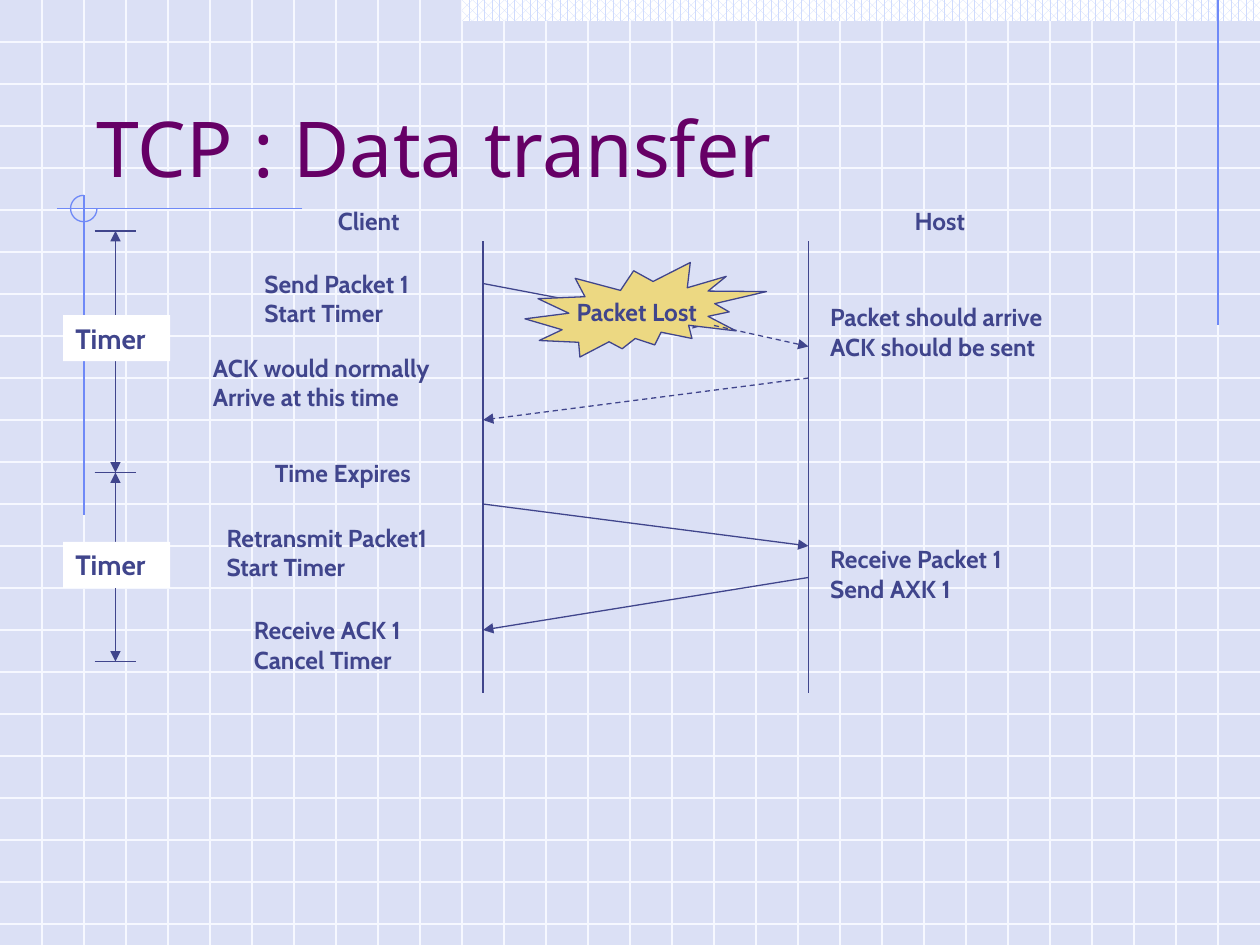
from dataclasses import dataclass

from lxml.etree import SubElement
from pptx import Presentation
from pptx.dml.color import RGBColor
from pptx.enum.dml import MSO_LINE, MSO_PATTERN
from pptx.enum.shapes import MSO_CONNECTOR, MSO_SHAPE
from pptx.enum.text import MSO_ANCHOR, MSO_AUTO_SIZE, PP_ALIGN
from pptx.oxml.ns import qn
from pptx.util import Inches, Pt

BACKGROUND = RGBColor(0xDB, 0xE0, 0xF5)
GRID = RGBColor(0xF6, 0xF8, 0xFF)
PATTERN = RGBColor(0xCF, 0xDB, 0xFD)
WHITE = RGBColor(0xFF, 0xFF, 0xFF)
ACCENT = RGBColor(0x6F, 0x89, 0xF7)
INK = RGBColor(0x40, 0x45, 0x8C)
PURPLE = RGBColor(0x66, 0x00, 0x66)
GOLD = RGBColor(0xEC, 0xD8, 0x82)

# All places and sizes are counted in cells of the background grid.
COLUMNS, ROWS = 30, 22.5
CELL = Inches(10) / COLUMNS
CLIENT, HOST = 11.5, 19.25
TIMER_AXIS = 2.75


@dataclass
class Label:
    text: str
    left: float
    top: float
    width: float
    wrap: bool = False


@dataclass
class Message:
    start: tuple[float, float]
    end: tuple[float, float]
    dashed: bool = False


@dataclass
class Timer:
    start: float
    end: float
    label_top: float


LABELS = [
    Label("Host", 21.48, 4.75, 1.95),
    Label("Client", 7.75, 4.75, 2.31, wrap=True),
    Label("Send Packet 1\nStart Timer", 6, 6.25, 4.77),
    Label("Retransmit Packet1\nStart Timer", 5.1, 12.3, 6.42),
    Label("Packet should arrive\nACK should be sent", 19.47, 7.05, 6.78),
    Label("ACK would normally\nArrive at this time", 4.77, 8.25, 6.54),
    Label("Receive Packet 1\nSend AXK 1", 19.47, 12.81, 5.58),
    Label("Time Expires", 6.25, 10.75, 4.38, wrap=True),
    Label("Receive ACK 1\nCancel Timer", 5.75, 14.5, 4.8, wrap=True),
]
LOST_PACKET = Message((CLIENT, 6.75), (16.75, 7.75))
EXPECTED_ARRIVAL = Message((17, 7.75), (HOST, 8.25), dashed=True)
MESSAGES = [
    LOST_PACKET,
    Message((HOST, 9), (CLIENT, 10), dashed=True),
    Message((CLIENT, 12), (HOST, 13)),
    Message((HOST, 13.75), (CLIENT, 15)),
]
TIMERS = [Timer(5.5, 11.25, 7.5), Timer(11.25, 15.75, 12.9)]


def cells(*counts: float) -> list[int]:
    return [round(count * CELL) for count in counts]


def add_line(page, start, end, color=INK, dashed=False, head=False, tail=False):
    line = page.shapes.add_connector(MSO_CONNECTOR.STRAIGHT, *cells(*start, *end))
    line.line.color.rgb = color
    line.line.width = Pt(0.75)
    if dashed:
        line.line.dash_style = MSO_LINE.DASH
    properties = line.line._get_or_add_ln()
    for tag, wanted in (("a:headEnd", head), ("a:tailEnd", tail)):
        if wanted:
            SubElement(properties, qn(tag), type="triangle")
    SubElement(line._element.spPr, qn("a:effectLst"))
    return line


def add_message(page, message: Message) -> None:
    add_line(page, message.start, message.end, dashed=message.dashed, tail=True)


def add_plain_shape(page, kind, left, top, width, height, fill=None, outline=None):
    shape = page.shapes.add_shape(kind, *cells(left, top, width, height))
    shape.shadow.inherit = False
    if fill is None:
        shape.fill.background()
    else:
        shape.fill.solid()
        shape.fill.fore_color.rgb = fill
    if outline is None:
        shape.line.fill.background()
    else:
        shape.line.color.rgb = outline
        shape.line.width = Pt(0.75)
    return shape


def write(box, text: str, *, size=14, font="Cabin", color=INK, bold=True, wrap=False,
          align=PP_ALIGN.LEFT, anchor=MSO_ANCHOR.TOP, grow=True) -> None:
    frame = box.text_frame
    frame.text = text
    frame.word_wrap = wrap
    frame.vertical_anchor = anchor
    frame.auto_size = MSO_AUTO_SIZE.SHAPE_TO_FIT_TEXT if grow else MSO_AUTO_SIZE.NONE
    for para in frame.paragraphs:
        para.alignment = align
        for span in para.runs:
            span.font.size = Pt(size)
            span.font.name = font
            span.font.bold = bold
            span.font.color.rgb = color


def add_label(page, label: Label) -> None:
    height = 1.71 if "\n" in label.text else 1
    box = page.shapes.add_textbox(*cells(label.left, label.top, label.width, height))
    write(box, label.text, wrap=label.wrap)


def add_timer(page, timer: Timer) -> None:
    for row in (timer.start, timer.end):
        add_line(page, (TIMER_AXIS - 0.5, row), (TIMER_AXIS + 0.5, row))
    add_line(page, (TIMER_AXIS, timer.start), (TIMER_AXIS, timer.end), head=True, tail=True)
    box = add_plain_shape(page, MSO_SHAPE.RECTANGLE, 1.5, timer.label_top, 2.55, 1.1, WHITE)
    write(box, "Timer", size=16)


def add_backdrop(page) -> None:
    page.background.fill.solid()
    page.background.fill.fore_color.rgb = BACKGROUND
    for row in range(1, int(ROWS) + 1):
        add_line(page, (0, row), (COLUMNS, row), GRID)
    for column in range(1, COLUMNS):
        add_line(page, (column, 0), (column, ROWS), GRID)
    strip = add_plain_shape(page, MSO_SHAPE.RECTANGLE, 11, 0, 19, 0.5)
    strip.fill.patterned()
    strip.fill.pattern = MSO_PATTERN.PERCENT_60
    strip.fill.fore_color.rgb = PATTERN
    strip.fill.back_color.rgb = WHITE
    add_line(page, (29, 0), (29, 7.75), ACCENT)
    add_line(page, (7.2, 4.97), (1.35, 4.97), ACCENT)
    add_line(page, (2, 4.65), (2, 12.27), ACCENT)
    arc = add_plain_shape(page, MSO_SHAPE.ARC, 1.68, 4.65, 0.63, 0.63, outline=ACCENT)
    arc.adjustments[0] = 0
    arc.adjustments[1] = 162  # 270 degrees in 60000ths, over 100000


def place_title(page) -> None:
    title = page.shapes.title
    title.left, title.top, title.width, title.height = cells(2, 1, 25.5, 3.75)
    write(title, "TCP : Data transfer", size=44, font="Noto Sans", color=PURPLE,
          bold=False, wrap=True, anchor=MSO_ANCHOR.BOTTOM, grow=False)
    page.shapes._spTree.append(title._element)  # in front of the grid


def main() -> None:
    deck = Presentation()
    deck.slide_width, deck.slide_height = cells(COLUMNS, ROWS)
    page = deck.slides.add_slide(deck.slide_layouts[5])
    add_backdrop(page)
    place_title(page)
    for lifeline in (CLIENT, HOST):
        add_line(page, (lifeline, 5.75), (lifeline, 16.5))
    for label in LABELS:
        add_label(page, label)
    for message in MESSAGES:
        add_message(page, message)
    seal = add_plain_shape(page, MSO_SHAPE.EXPLOSION2, 12.5, 6.25, 5.75, 2.25, GOLD, INK)
    write(seal, "Packet Lost", align=PP_ALIGN.CENTER, anchor=MSO_ANCHOR.MIDDLE, grow=False)
    add_message(page, EXPECTED_ARRIVAL)
    for timer in TIMERS:
        add_timer(page, timer)
    deck.save("out.pptx")


if __name__ == "__main__":
    main()
